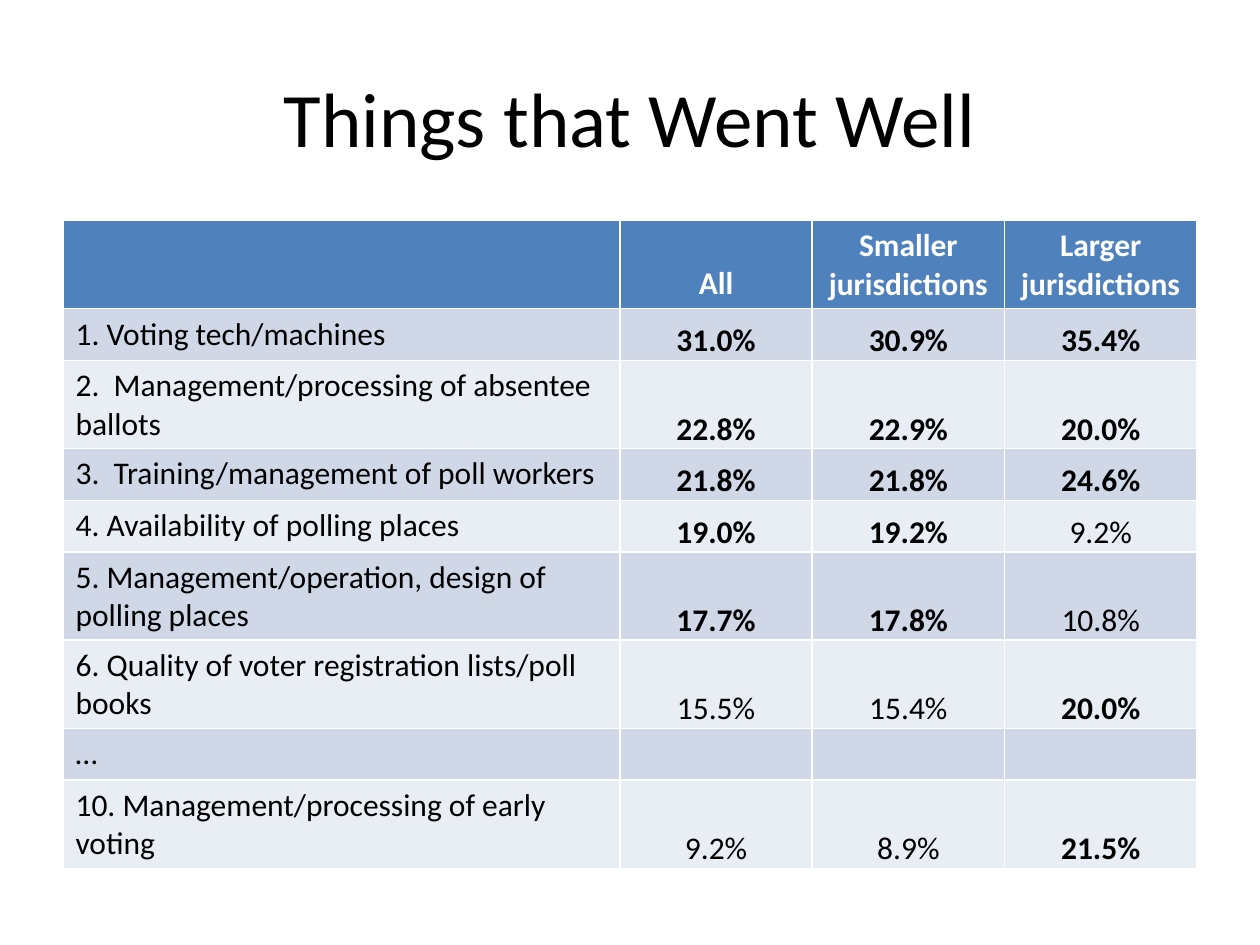
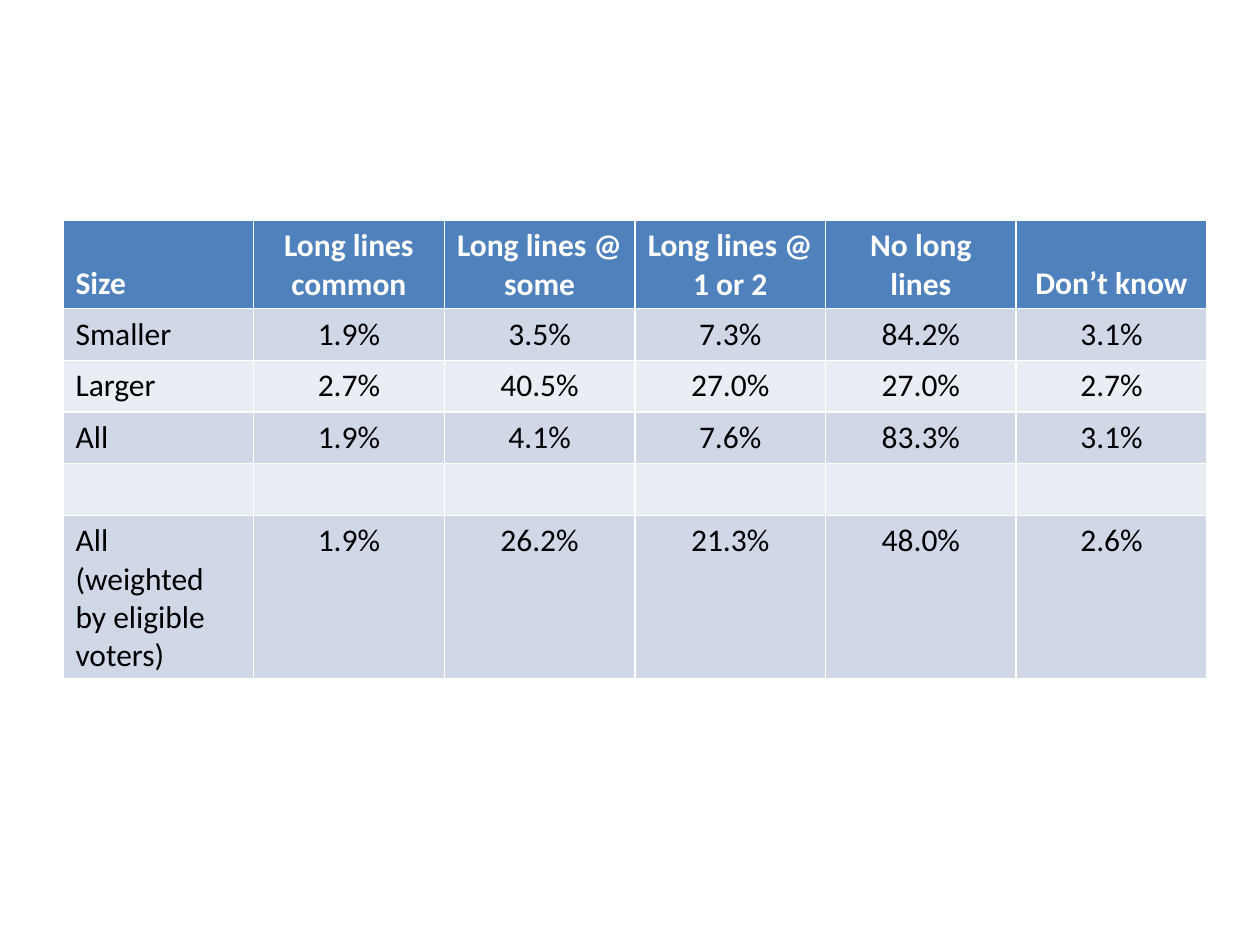
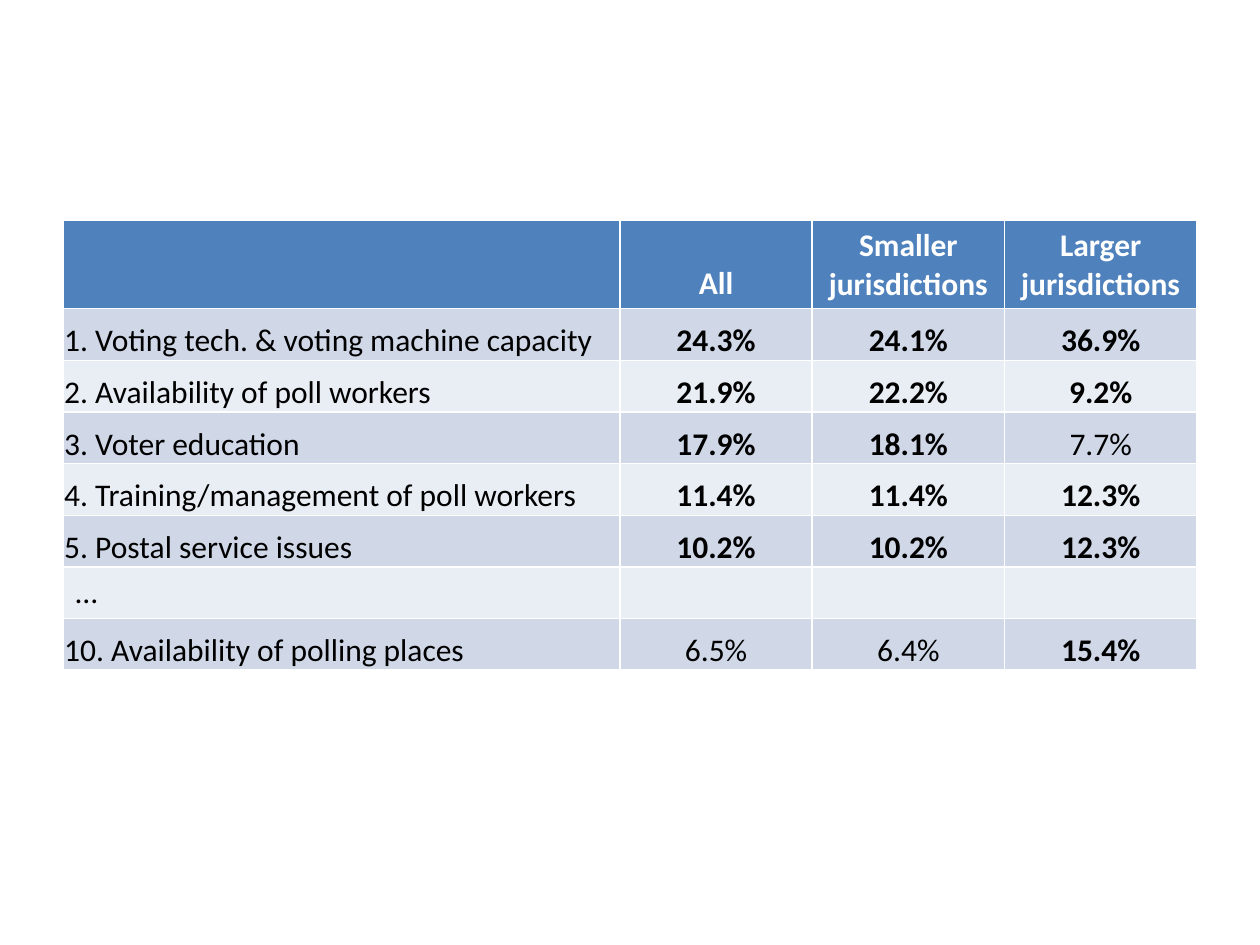
from dataclasses import dataclass

from pptx import Presentation
from pptx.dml.color import RGBColor as Rgb
from pptx.enum.text import MSO_ANCHOR as Anchor, PP_ALIGN as Align
from pptx.util import Inches, Pt


@dataclass(frozen=True)
class Theme:
    font: str = "Calibri"
    title: int = 44
    body: int = 18
    ink: str = "000000"
    light: str = "FFFFFF"
    head: str = "4F81BD"
    bands: tuple = ("D0D8E8", "E9EDF4")


LEFT, TOP, WIDE, ROW = 0.5, 1.75, 9, 0.41
LABEL = 4.42
WIDTHS = [LABEL] + [(WIDE - LABEL) / 3] * 3
TIGHT = {
    "vertical_anchor": Anchor.BOTTOM,
    "margin_left": Inches(0.01),
    "margin_right": Inches(0.01),
    "margin_top": Inches(0.01),
    "margin_bottom": 0,
}
GROUPS = ["", "All", "Smaller jurisdictions", "Larger jurisdictions"]

WELL = [
    GROUPS,
    ["1. Voting tech/machines", "31.0%", "30.9%", "35.4%"],
    ["2.  Management/processing of absentee ballots", "22.8%", "22.9%", "20.0%"],
    ["3.  Training/management of poll workers", "21.8%", "21.8%", "24.6%"],
    ["4. Availability of polling places", "19.0%", "19.2%", "9.2%"],
    ["5. Management/operation, design of polling places", "17.7%", "17.8%", "10.8%"],
    ["6. Quality of voter registration lists/poll books", "15.5%", "15.4%", "20.0%"],
    ["…", "", "", ""],
    ["10. Management/processing of early voting", "9.2%", "8.9%", "21.5%"],
]
LINES = [
    ["Size", "Long lines common", "Long lines @ some", "Long lines @ 1 or 2",
     "No long lines", "Don’t know"],
    ["Smaller", "1.9%", "3.5%", "7.3%", "84.2%", "3.1%"],
    ["Larger", "2.7%", "40.5%", "27.0%", "27.0%", "2.7%"],
    ["All", "1.9%", "4.1%", "7.6%", "83.3%", "3.1%"],
    [""] * 6,
    ["All (weighted by eligible voters)", "1.9%", "26.2%", "21.3%", "48.0%", "2.6%"],
]
NEEDS = [
    GROUPS,
    ["1. Voting tech. & voting machine capacity", "24.3%", "24.1%", "36.9%"],
    ["2. Availability of poll workers", "21.9%", "22.2%", "9.2%"],
    ["3. Voter education", "17.9%", "18.1%", "7.7%"],
    ["4. Training/management of poll workers", "11.4%", "11.4%", "12.3%"],
    ["5. Postal service issues", "10.2%", "10.2%", "12.3%"],
    ["…", "", "", ""],
    ["10. Availability of polling places", "6.5%", "6.4%", "15.4%"],
]


def top_five(rows, col):
    shares = [row[col] for row in rows[1:] if row[col]]
    return sorted(shares, key=lambda share: float(share.rstrip("%")))[-5:]


class Deck:
    def __init__(self, theme):
        self.theme = theme
        self.prs = Presentation()
        self.prs.slide_width, self.prs.slide_height = Inches(10), Inches(7.5)
        self.slide = None

    def page(self):
        self.slide = self.prs.slides.add_slide(self.prs.slide_layouts[6])

    def label(self, frame, text, size, color, bold=False, align=Align.LEFT):
        para = frame.paragraphs[0]
        para.alignment = align
        run = para.add_run()
        run.text = text
        look = {"name": self.theme.font, "size": Pt(size), "bold": bold}
        for key, value in look.items():
            setattr(run.font, key, value)
        run.font.color.rgb = Rgb.from_string(color)

    def title(self, text):
        box = self.slide.shapes.add_textbox(
            Inches(LEFT), Inches(0.3), Inches(WIDE), Inches(1.25))
        frame = box.text_frame
        frame.word_wrap = True
        frame.vertical_anchor = Anchor.MIDDLE
        self.label(frame, text, self.theme.title, self.theme.ink, align=Align.CENTER)

    def table(self, rows, widths, ranked=False, snug=False):
        grid = self.slide.shapes.add_table(
            len(rows), len(widths), Inches(LEFT), Inches(TOP),
            Inches(sum(widths)), Inches(ROW * len(rows))).table
        for col, width in zip(grid.columns, widths):
            col.width = Inches(width)
        best = [top_five(rows, col) if ranked and col else []
                for col in range(len(widths))]
        for r, row in enumerate(rows):
            for c, text in enumerate(row):
                tight = r and (ranked if c else snug) and text not in ("", "…")
                self.cell(grid.cell(r, c), text, r, c, tight, text in best[c])

    def cell(self, cell, text, r, c, tight, strong):
        theme = self.theme
        fill = theme.bands[(r - 1) % 2] if r else theme.head
        cell.fill.solid()
        cell.fill.fore_color.rgb = Rgb.from_string(fill)
        if tight:
            for key, value in TIGHT.items():
                setattr(cell, key, value)
        elif not r:
            cell.vertical_anchor = Anchor.BOTTOM
        if text:
            self.label(cell.text_frame, text, theme.body,
                       theme.ink if r else theme.light, strong or r == 0,
                       Align.CENTER if c else Align.LEFT)


def main():
    deck = Deck(Theme())
    deck.page()
    deck.title("Things that Went Well")
    deck.table(WELL, WIDTHS, ranked=True)
    deck.page()
    deck.table(LINES, [9.08 / 6] * 6)
    deck.page()
    deck.table(NEEDS, WIDTHS, ranked=True, snug=True)
    deck.prs.save("out.pptx")


if __name__ == "__main__":
    main()
